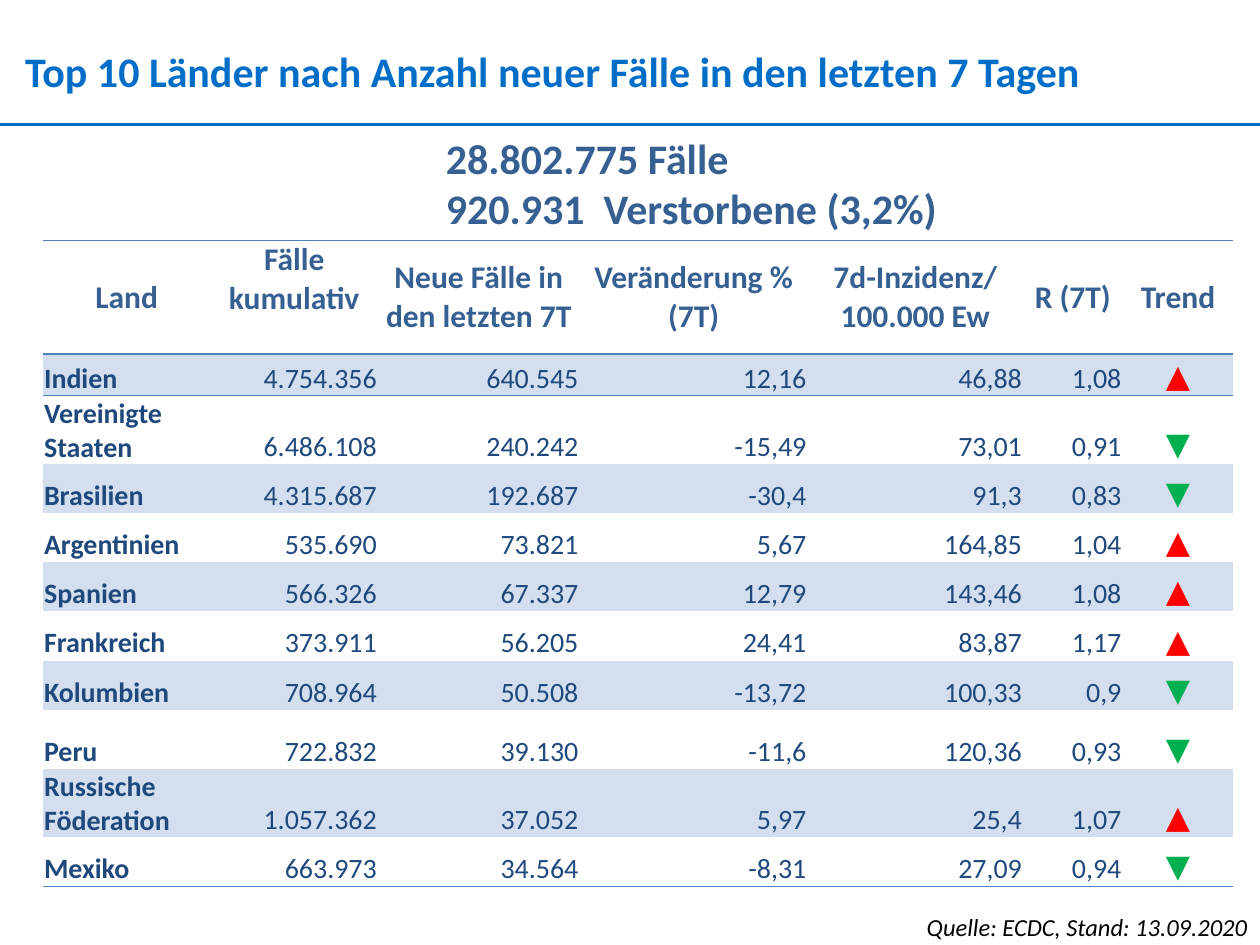
from lxml.etree import SubElement
from pptx import Presentation
from pptx.dml.color import RGBColor
from pptx.enum.shapes import MSO_CONNECTOR
from pptx.enum.text import MSO_ANCHOR, MSO_AUTO_SIZE, PP_ALIGN
from pptx.oxml.ns import qn
from pptx.util import Inches, Pt

# Content
TITLE = "Top 10 Länder nach Anzahl neuer Fälle in den letzten 7 Tagen"
TOTALS = ["28.802.775 Fälle", "920.931  Verstorbene (3,2%)"]
SOURCE = "Quelle: ECDC, Stand: 13.09.2020"
HEADINGS = ["Land", "Fälle kumulativ", "Neue Fälle in den letzten 7T",
            "Veränderung % (7T)", "7d-Inzidenz/ 100.000 Ew", "R (7T)", "Trend"]
COUNTRIES = [
    ("Indien", "4.754.356", "640.545", "12,16", "46,88", "1,08", "▲"),
    ("Vereinigte Staaten", "6.486.108", "240.242", "-15,49", "73,01", "0,91", "▼"),
    ("Brasilien", "4.315.687", "192.687", "-30,4", "91,3", "0,83", "▼"),
    ("Argentinien", "535.690", "73.821", "5,67", "164,85", "1,04", "▲"),
    ("Spanien", "566.326", "67.337", "12,79", "143,46", "1,08", "▲"),
    ("Frankreich", "373.911", "56.205", "24,41", "83,87", "1,17", "▲"),
    ("Kolumbien", "708.964", "50.508", "-13,72", "100,33", "0,9", "▼"),
    ("Peru", "722.832", "39.130", "-11,6", "120,36", "0,93", "▼"),
    ("Russische Föderation", "1.057.362", "37.052", "5,97", "25,4", "1,07", "▲"),
    ("Mexiko", "663.973", "34.564", "-8,31", "27,09", "0,94", "▼"),
]

# Theme and measures in inches
THEME = {
    "font": "Calibri", "title": "006EC7", "heading": "366092", "body": "1F497D",
    "source": "000000", "rule": "4F81BD", "band": "D3DFEE",
    "▲": "FF0000", "▼": "00B050",
    "large": 24, "medium": 18, "cell": 16, "small": 14,
}
COLUMN_WIDTHS = [1.33, 1.33, 1.6, 1.81, 1.71, 0.79, 0.88]
HEADING_HEIGHT, ROW_HEIGHT = 0.9, 0.39
SPECIAL_HEIGHTS = {"Indien": 0.33, "Vereinigte Staaten": 0.54, "Peru": 0.47,
                   "Russische Föderation": 0.54}
HEADING_MARGINS = {"margin_left": 0.06, "margin_right": 0.06,
                   "margin_top": 0, "margin_bottom": 0}
BODY_MARGINS = {"margin_left": 0.01, "margin_right": 0.01,
                "margin_top": 0.01, "margin_bottom": 0}
RAISED_MARGINS = {**HEADING_MARGINS, "margin_bottom": 0.29}


def set_attributes(target, values):
    for name, value in values.items():
        setattr(target, name, value)


def write(frame, lines, size, color, align=PP_ALIGN.LEFT, **style):
    for index, line in enumerate(lines):
        paragraph = frame.paragraphs[0] if index == 0 else frame.add_paragraph()
        paragraph.alignment = align
        run = paragraph.add_run()
        run.text = line
        set_attributes(run.font, {"name": THEME["font"], "size": Pt(THEME[size]), **style})
        run.font.color.rgb = RGBColor.from_string(THEME[color])


def add_label(slide, box, lines, size, color, wrap, **style):
    label = slide.shapes.add_textbox(*map(Inches, box))
    label.text_frame.word_wrap = wrap
    write(label.text_frame, lines, size, color, **style)


def add_border(cell, edge):
    border = SubElement(cell._tc.get_or_add_tcPr(), qn(f"a:{edge}"), w=str(Pt(1)))
    fill = SubElement(border, qn("a:solidFill"))
    SubElement(fill, qn("a:srgbClr"), val=THEME["rule"])


def format_cell(cell, margins, anchor, edges, banded):
    set_attributes(cell, {name: Inches(value) for name, value in margins.items()})
    cell.vertical_anchor = anchor
    for edge in edges:
        add_border(cell, edge)
    if banded:
        cell.fill.solid()
        cell.fill.fore_color.rgb = RGBColor.from_string(THEME["band"])
    else:
        cell.fill.background()


def add_country_table(slide):
    heights = [HEADING_HEIGHT] + [SPECIAL_HEIGHTS.get(country[0], ROW_HEIGHT)
                                  for country in COUNTRIES]
    table = slide.shapes.add_table(
        len(heights), len(HEADINGS), Inches(0.34), Inches(1.91),
        Inches(sum(COLUMN_WIDTHS)), Inches(sum(heights))).table
    set_attributes(table, {"first_row": False, "horz_banding": False})
    # Plain table style without grid
    table._tbl.tblPr.find(qn("a:tableStyleId")).text = "{2D5ABB26-0587-4C30-8999-92F81FD0307C}"
    for column, width in zip(table.columns, COLUMN_WIDTHS):
        column.width = Inches(width)
    for row, height in zip(table.rows, heights):
        row.height = Inches(height)

    # Heading row
    for column, heading in enumerate(HEADINGS):
        cell = table.cell(0, column)
        margins = RAISED_MARGINS if heading == "Fälle kumulativ" else HEADING_MARGINS
        format_cell(cell, margins, MSO_ANCHOR.MIDDLE, ["lnT", "lnB"], False)
        write(cell.text_frame, [heading], "medium", "heading", PP_ALIGN.CENTER, bold=True)

    # Country rows
    for row, country in enumerate(COUNTRIES, start=1):
        edges = {1: ["lnT"], len(COUNTRIES): ["lnB"]}.get(row, [])
        for column, value in enumerate(country):
            cell = table.cell(row, column)
            format_cell(cell, BODY_MARGINS, MSO_ANCHOR.BOTTOM, edges, row % 2 == 1)
            if value in THEME:
                look = ("medium", value, PP_ALIGN.CENTER)
            else:
                look = ("cell", "body", PP_ALIGN.RIGHT if column else PP_ALIGN.LEFT)
            write(cell.text_frame, [value], *look, bold=column == 0)


def main():
    presentation = Presentation()
    set_attributes(presentation, {"slide_width": Inches(10), "slide_height": Inches(7.5)})
    slide = presentation.slides.add_slide(presentation.slide_layouts[5])

    # Title and rule
    title = slide.shapes.title
    set_attributes(title, {"left": Inches(0.2), "top": Inches(0.36),
                           "width": Inches(9.63), "height": Inches(0.4)})
    set_attributes(title.text_frame, {
        "margin_left": 0, "margin_right": 0, "margin_top": 0, "margin_bottom": 0,
        "vertical_anchor": MSO_ANCHOR.TOP, "auto_size": MSO_AUTO_SIZE.NONE})
    write(title.text_frame, [TITLE], "large", "title", bold=True)
    rule = slide.shapes.add_connector(
        MSO_CONNECTOR.STRAIGHT, 0, Inches(0.99), Inches(10), Inches(0.99))
    rule.line.width = Pt(1.5)
    rule.line.color.rgb = RGBColor.from_string(THEME["title"])
    SubElement(rule._element.spPr, qn("a:effectLst"))

    # Totals, table and source
    add_label(slide, (3.44, 1, 4.14, 0.91), TOTALS, "large", "heading", False, bold=True)
    add_label(slide, (6.46, 7.19, 3.54, 0.34), [SOURCE], "small", "source", True,
              align=PP_ALIGN.RIGHT, italic=True)
    add_country_table(slide)
    presentation.save("out.pptx")


if __name__ == "__main__":
    main()
